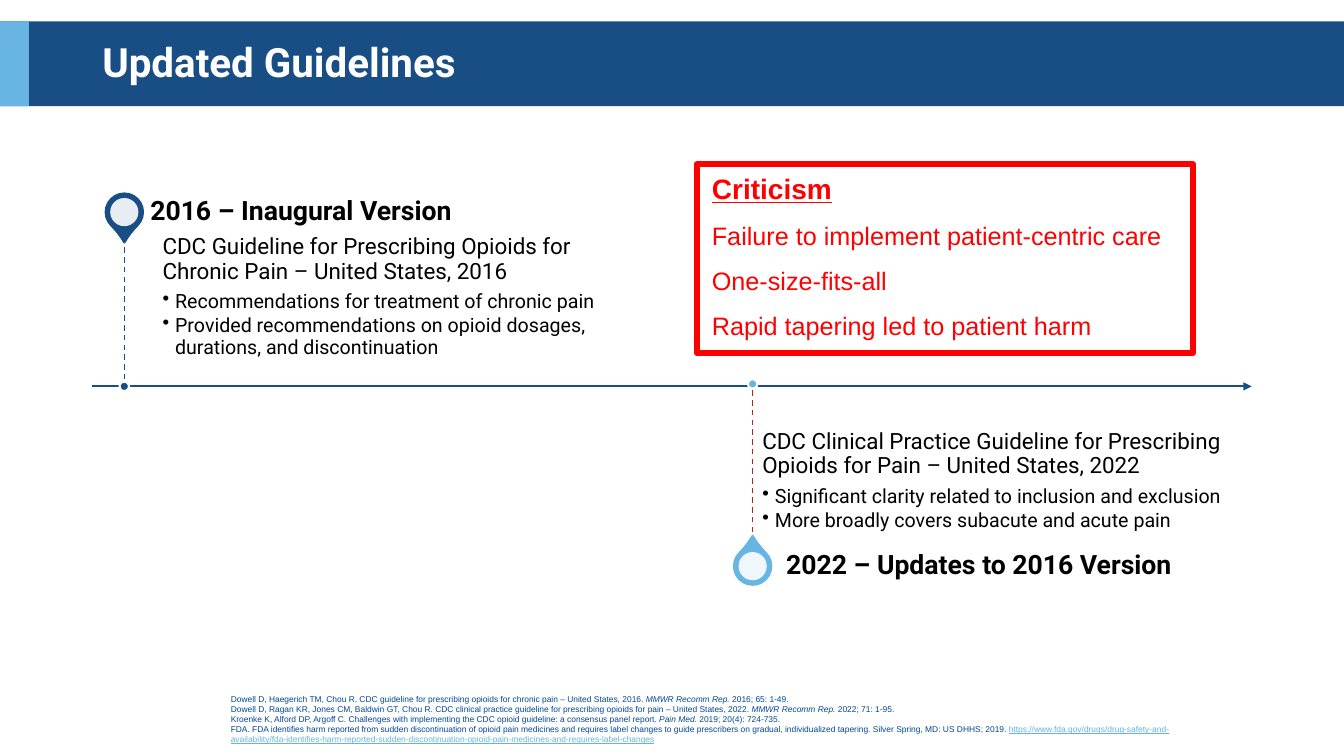
import lxml.etree
import pptx
import pptx.dml.color
import pptx.enum.dml
import pptx.enum.shapes
import pptx.enum.text
import pptx.oxml.ns
import pptx.util

COLS, ROWS = 160, 90
WIDE, HIGH = pptx.util.Inches(13.33), pptx.util.Inches(7.5)
NAVY, SKY, RED, WHITE, BLACK = "194E84", "68B5E4", "FF0000", "FFFFFF", "000000"
AXIS = 46
FORM = pptx.enum.shapes.MSO_SHAPE
ANCHOR = pptx.enum.text.MSO_ANCHOR
DASH = pptx.enum.dml.MSO_LINE.DASH
LEAD = {"name": "Roboto", "size": 16, "color": BLACK}
POINT = LEAD | {"size": 14}
HEAD = LEAD | {"size": 19, "bold": True}
CITE = {"name": "Arial", "size": 6, "color": "004797"}
LINK = {"color": "64B4DC", "underline": True}
ITALIC = {"italic": True}
CRITIC = {"name": "Arial", "size": 18, "color": RED}

REFS = [
    [("Dowell D, Haegerich TM, Chou R. CDC guideline for prescribing opioids for chronic pain – "
      "United States, 2016. ", {}), ("MMWR Recomm Rep. ", ITALIC), ("2016; 65: 1-49.", {})],
    [("Dowell D, Ragan KR, Jones CM, Baldwin GT, Chou R. CDC clinical practice guideline for "
      "prescribing opioids for pain – United States, 2022. ", {}),
     ("MMWR Recomm Rep. ", ITALIC), ("2022; 71: 1-95.", {})],
    [("Kroenke K, Alford DP, Argoff C. Challenges with implementing the CDC opioid guideline: "
      "a consensus panel report. ", {}), ("Pain Med. ", ITALIC), ("2019; 20(4): 724-735.", {})],
    [("FDA. FDA identifies harm reported from sudden discontinuation of opioid pain medicines and "
      "requires label changes to guide prescribers on gradual, individualized tapering. "
      "Silver Spring, MD: US DHHS; 2019. ", {}),
     ("https://www.fda.gov/drugs/drug-safety-and-availability/fda-identifies-harm-reported-"
      "sudden-discontinuation-opioid-pain-medicines-and-requires-label-changes", LINK)],
]


def col(n):
    return round(WIDE * n / COLS)


def row(n):
    return round(HIGH * n / ROWS)


def tint(code):
    return pptx.dml.color.RGBColor.from_string(code)


def tag(parent, name, **values):
    return lxml.etree.SubElement(parent, pptx.oxml.ns.qn(name), **values)


def shape(slide, form, box, fill=None, line=None, width=1.5):
    x, y, w, h = box
    item = slide.shapes.add_shape(form, col(x), row(y), col(w), row(h))
    item.shadow.inherit = False
    if fill:
        item.fill.solid()
        item.fill.fore_color.rgb = tint(fill)
    else:
        item.fill.background()
    if line:
        item.line.color.rgb = tint(line)
        item.line.width = pptx.util.Pt(width)
    else:
        item.line.fill.background()
    return item


def disc(slide, form, x, y, size, *style):
    """Centre a round shape on a grid point."""
    return shape(slide, form, (x - size / 2, y - size / 2, size, size), *style)


def line(slide, start, end, color, width):
    item = slide.shapes.add_connector(pptx.enum.shapes.MSO_CONNECTOR.STRAIGHT,
                                      col(start[0]), row(start[1]), col(end[0]), row(end[1]))
    item.line.color.rgb = tint(color)
    item.line.width = pptx.util.Pt(width)
    tag(item._element.spPr, "a:effectLst")
    return item


def style(font, look):
    for key, value in look.items():
        if key == "color":
            font.color.rgb = tint(value)
        else:
            setattr(font, key, pptx.util.Pt(value) if key == "size" else value)


def para(runs, look, bullet=False, **gaps):
    if isinstance(runs, str):
        runs = [(runs, {})]
    return runs, look, bullet, gaps


def text(slide, box, paras, anchor=ANCHOR.TOP, pads=(0, 0, 0, 0)):
    """Write paragraphs in a box; pads are left, top, right, bottom."""
    x, y, w, h = box
    frame = slide.shapes.add_textbox(col(x), row(y), col(w), row(h)).text_frame
    sides = ("margin_left", "margin_top", "margin_right", "margin_bottom")
    values = dict(zip(sides, map(row, pads)), word_wrap=True, vertical_anchor=anchor)
    for key, value in values.items():
        setattr(frame, key, value)
    for i, (runs, look, bullet, gaps) in enumerate(paras):
        p = frame.paragraphs[0] if i == 0 else frame.add_paragraph()
        if bullet:
            p.level = 1
            props = p._p.get_or_add_pPr()
            props.set("marL", str(col(1.5)))
            props.set("indent", str(-col(1.5)))
            tag(props, "a:buChar", char="•")
        for key, value in gaps.items():
            if key != "space_before" or i:
                setattr(p, key, value)
        for words, extra in runs:
            run = p.add_run()
            run.text = words
            style(run.font, look | extra)


def pin(slide, x, y, tip, turn, color, dash, dot):
    """Draw a map pin, its dashed stem and the dot on the time line."""
    drop = disc(slide, FORM.TEAR, x, y, 4.44, color, color)
    drop.adjustments[0] = 1.15
    drop.rotation = turn
    hole = disc(slide, FORM.OVAL, x, y, 3.36, WHITE)
    tag(hole._element.spPr.find(".//" + pptx.oxml.ns.qn("a:srgbClr")), "a:alpha", val="90000")
    line(slide, (x, tip), (x, dot), dash, 1).line.dash_style = DASH
    disc(slide, FORM.OVAL, x, dot, 1.12, color, WHITE)


def notes(slide, box, lead, points, anchor, pads):
    after = pptx.util.Pt
    paras = [para(lead, LEAD, line_spacing=0.9, space_after=after(5.6))]
    paras += [para(p, POINT, True, line_spacing=0.9, space_after=after(2.1)) for p in points]
    text(slide, box, paras, anchor, pads)


def head(slide, box, words):
    text(slide, box, [para(words, HEAD, line_spacing=0.9)], ANCHOR.MIDDLE, (0, 0, 1.5, 0))


def critic(slide):
    gaps = {"line_spacing": 0.94, "space_before": pptx.util.Pt(8), "space_after": pptx.util.Pt(4)}
    items = ["Failure to implement patient-centric care", "One-size-fits-all",
             "Rapid tapering led to patient harm"]
    top = CRITIC | {"size": 20, "bold": True, "underline": True}
    paras = [para("Criticism", top, **gaps)] + [para(i, CRITIC, **gaps) for i in items]
    text(slide, (84.75, 20.75, 55.5, 20.2), paras)
    shape(slide, FORM.RECTANGLE, (82.95, 19.55, 59.05, 22.45), None, RED, 4.5)


def main():
    deck = pptx.Presentation()
    deck.slide_width, deck.slide_height = WIDE, HIGH
    slide = deck.slides.add_slide(deck.slide_layouts[6])

    shape(slide, FORM.RECTANGLE, (0, 2.55, COLS, 10.08), NAVY)
    shape(slide, FORM.RECTANGLE, (0, 2.55, 3.45, 10.08), SKY)
    title = LEAD | {"size": 28.8, "color": WHITE, "bold": True}
    text(slide, (11, 4.8, 134.3, 5.8), [para("Updated Guidelines", title, line_spacing=0.9)],
         ANCHOR.MIDDLE, (1.2, 0.6, 1.2, 0.6))

    axis = line(slide, (11, AXIS), (149, AXIS), NAVY, 1.5)
    tag(axis.line._get_or_add_ln(), "a:tailEnd", type="triangle")

    pin(slide, 14.8, 25.25, 28.3, 135, NAVY, NAVY, AXIS)
    notes(slide, (19.35, 26.75, 52, 17.65),
          "CDC Guideline for Prescribing Opioids for Chronic Pain – United States, 2016",
          ["Recommendations for treatment of chronic pain",
           "Provided recommendations on opioid dosages, durations, and discontinuation"],
          ANCHOR.TOP, (0, 1.3, 0, 2))
    head(slide, (17.9, 22.1, 49.8, 6.25), "2016 – Inaugural Version")

    pin(slide, 89.6, 67.4, 63.35, 315, SKY, "B22222", 45.7)
    notes(slide, (90.75, 49.1, 57.6, 15.5),
          "CDC Clinical Practice Guideline for Prescribing Opioids for Pain – United States, 2022",
          ["Significant clarity related to inclusion and exclusion",
           "More broadly covers subacute and acute pain"],
          ANCHOR.BOTTOM, (0, 2, 1.3, 1.3))
    head(slide, (93.6, 64.2, 49.7, 6.25), "2022 – Updates to 2016 Version")

    critic(slide)
    text(slide, (26.3, 82, 116.9, 7.3), [para(r, CITE) for r in REFS], pads=(1.2, 0.6, 1.2, 0.6))
    deck.save("out.pptx")


if __name__ == "__main__":
    main()
